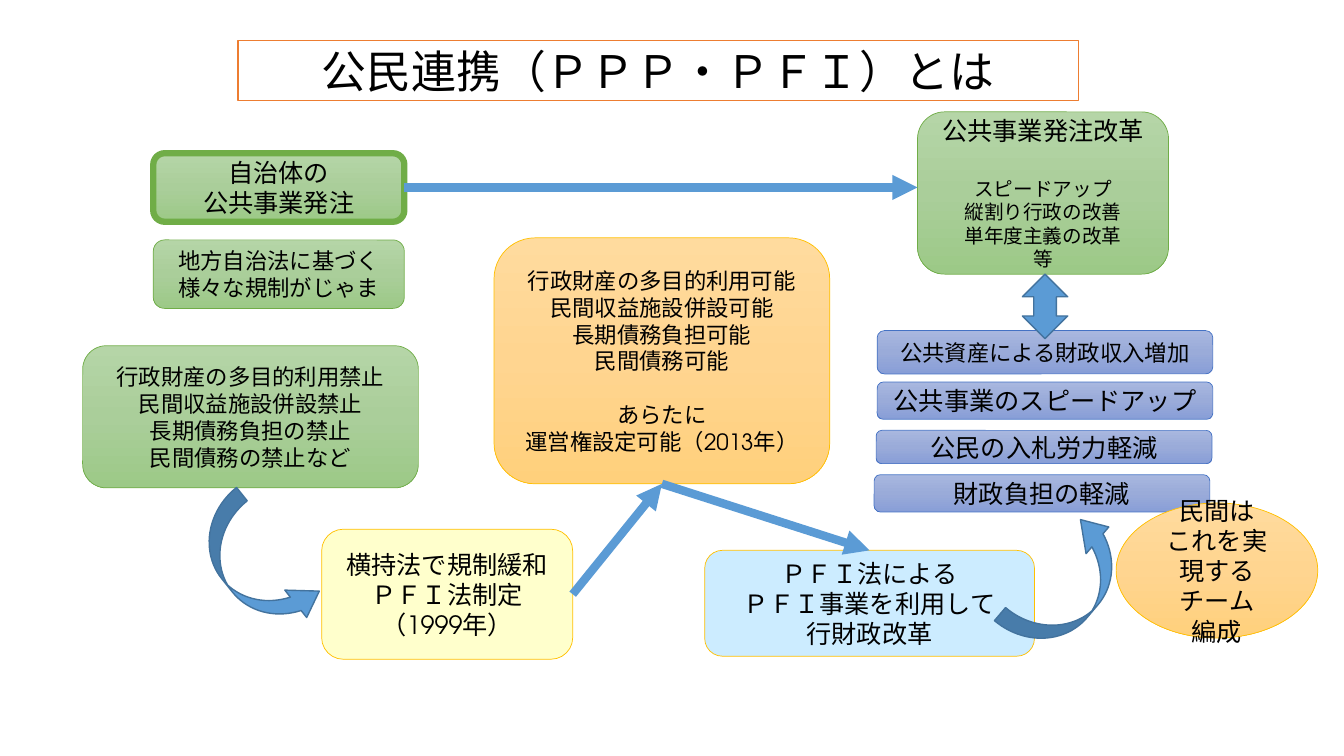
from copy import deepcopy
from dataclasses import dataclass

from lxml import etree
from pptx import Presentation
from pptx.dml.color import RGBColor
from pptx.enum import shapes, text
from pptx.util import Inches, Pt

SHAPE = shapes.MSO_SHAPE
TOP, BOTTOM, RIGHT = 0, 2, 3


class Theme:
    font = "TeX Gyre Adventor"
    ink = "000000"
    title, large, medium, small = 32, 18, 16, 14
    # Each style: fill colours from top to bottom, then the outline colour
    heading = (["FFFFFF"], "ED7D31")
    green = (["B5D5A7", "AACE9A", "9CC987"], "70AD47")
    orange = (["FFDB9E", "FFD590", "FFD07C"], "FFC000")
    indigo = (["A8B7DF", "9AABD9", "889ED7"], "4472C4")
    yellow = (["FFFFCC"], "FFC000")
    sky = (["CCECFF"], "FFC000")
    arrow = (["5B9BD5"], "43739E")


@dataclass
class Box:
    left: float
    top: float
    width: float
    height: float

    def inner(self, left, top, width, height):
        return Box(self.left + left, self.top + top, width, height)

    def lengths(self):
        return [Inches(n) for n in (self.left, self.top, self.width, self.height)]


def color(value):
    return RGBColor.from_string(value)


def paint(shape, style, line_width=0.5):
    colors, outline = style
    if len(colors) == 1:
        shape.fill.solid()
        shape.fill.fore_color.rgb = color(colors[0])
    else:
        shape.fill.gradient()
        shape.fill.gradient_angle = 270
        stops = shape._element.spPr.find(".//{*}gsLst")
        middle = deepcopy(stops[0])
        middle.set("pos", "50000")
        stops.insert(1, middle)
        for stop, value in zip(shape.fill.gradient_stops, colors):
            stop.color.rgb = color(value)
    shape.line.color.rgb = color(outline)
    shape.line.width = Pt(line_width)


def write(shape, lines, size):
    """Each line is a text, or a (text, size, space before) tuple."""
    frame = shape.text_frame
    frame_format = {"word_wrap": True, "auto_size": text.MSO_AUTO_SIZE.NONE,
                    "vertical_anchor": text.MSO_ANCHOR.MIDDLE}
    for name, value in frame_format.items():
        setattr(frame, name, value)
    for index, line in enumerate(lines):
        words, points, gap = line if isinstance(line, tuple) else (line, size, 0)
        paragraph = frame.add_paragraph() if index else frame.paragraphs[0]
        paragraph.text = words
        paragraph.alignment = text.PP_ALIGN.CENTER
        if gap:
            paragraph.space_before = Pt(gap)
        font_format = {"name": Theme.font, "size": Pt(points), "bold": False}
        for name, value in font_format.items():
            setattr(paragraph.font, name, value)
        paragraph.font.color.rgb = color(Theme.ink)


def add_card(slide, box, lines, style, size=Theme.large, line_width=0.5,
             kind=SHAPE.ROUNDED_RECTANGLE):
    card = slide.shapes.add_shape(kind, *box.lengths())
    card.shadow.inherit = False
    paint(card, style, line_width)
    write(card, lines, size)
    return card


def add_block_arrow(slide, box, kind, adjustments, rotation=0):
    arrow = slide.shapes.add_shape(kind, *box.lengths())
    arrow.shadow.inherit = False
    arrow.rotation = rotation
    paint(arrow, Theme.arrow, 1)
    for index, value in enumerate(adjustments):
        arrow.adjustments[index] = value


def add_curved_arrow(slide, left, top, rotation):
    add_block_arrow(slide, Box(left, top, 1.49, 0.68), SHAPE.CURVED_UP_ARROW,
                    (0.25, 0.512, 0.385), rotation)


def add_straight_arrow(slide, start, start_side, end=None, end_side=TOP, point=(0, 0)):
    """Arrow from a card's side to another card's side, or to a free point."""
    x, y = (Inches(n) for n in point)
    arrow = slide.shapes.add_connector(shapes.MSO_CONNECTOR.STRAIGHT, x, y, x, y)
    arrow.begin_connect(start, start_side)
    if end is not None:
        arrow.end_connect(end, end_side)
    arrow.line.color.rgb = color(Theme.arrow[0][0])
    arrow.line.width = Pt(6)
    namespace = "{http://schemas.openxmlformats.org/drawingml/2006/main}"
    properties = arrow._element.spPr
    etree.SubElement(properties.find(namespace + "ln"), namespace + "tailEnd",
                     type="triangle")
    etree.SubElement(properties, namespace + "effectLst")


def add_title(slide, box):
    title = slide.shapes.title
    title.left, title.top, title.width, title.height = box.lengths()
    paint(title, Theme.heading, 1)
    write(title, ["公民連携（ＰＰＰ・ＰＦＩ）とは"], Theme.title)


def add_current_rules(slide, box):
    ordering = add_card(slide, box.inner(0.7, 0, 2.49, 0.68),
                        ["自治体の", "公共事業発注"], Theme.green, line_width=4.5)
    add_card(slide, box.inner(0.7, 0.86, 2.49, 0.68),
             ["地方自治法に基づく", "様々な規制がじゃま"], Theme.green, Theme.medium)
    add_card(slide, box.inner(0, 1.91, box.width, 1.41),
             ["行政財産の多目的利用禁止", "民間収益施設併設禁止",
              "長期債務負担の禁止", "民間債務の禁止など"], Theme.green, Theme.medium)
    return ordering


def add_deregulation(slide, box):
    law = add_card(slide, box.inner(0, 2.89, 2.49, 1.29),
                   ["横持法で規制緩和", "ＰＦＩ法制定", "（1999年）"], Theme.yellow)
    freedoms = add_card(slide, box.inner(1.71, 0, 3.33, 2.44),
                        ["行政財産の多目的利用可能", "民間収益施設併設可能",
                         "長期債務負担可能", "民間債務可能",
                         ("あらたに", Theme.medium, 19), "運営権設定可能（2013年）"],
                        Theme.orange, Theme.medium)
    projects = add_card(slide, box.inner(3.8, 3.1, 3.27, 1.05),
                        ["ＰＦＩ法による", "ＰＦＩ事業を利用して", "行財政改革"], Theme.sky)
    add_straight_arrow(slide, law, RIGHT, freedoms, BOTTOM)
    add_straight_arrow(slide, freedoms, BOTTOM, projects, TOP)


def add_reform(slide, box):
    benefits = [
        (0.03, 2.17, 0.43, "公共資産による財政収入増加", Theme.medium),
        (0.03, 2.68, 0.37, "公共事業のスピードアップ", Theme.large),
        (0.02, 3.16, 0.33, "公民の入札労力軽減", Theme.large),
        (0, 3.6, 0.37, "財政負担の軽減", Theme.large),
    ]
    for left, top, height, words, size in benefits:
        add_card(slide, box.inner(left, top, 3.33, height), [words], Theme.indigo, size)
    add_card(slide, box.inner(0.43, 0, 2.49, 1.61),
             [("公共事業発注改革", Theme.large, 0), ("スピードアップ", Theme.small, 22),
              "縦割り行政の改善", "単年度主義の改革", "等"], Theme.green, Theme.small)
    add_block_arrow(slide, box.inner(1.47, 1.61, 0.45, 0.64),
                    SHAPE.UP_DOWN_ARROW, (0.304, 0.5))
    add_card(slide, box.inner(2.4, 3.88, 2, 1.34),
             ["民間は", "これを実現するチーム", "編成"], Theme.orange, kind=SHAPE.OVAL)


def main():
    presentation = Presentation()
    presentation.slide_width, presentation.slide_height = Inches(13.33), Inches(7.5)
    slide = presentation.slides.add_slide(presentation.slide_layouts[5])
    add_title(slide, Box(2.36, 0.4, 8.34, 0.6))
    ordering = add_current_rules(slide, Box(0.82, 1.52, 3.33, 3.32))
    add_deregulation(slide, Box(3.19, 2.36, 7.07, 4.18))
    add_reform(slide, Box(8.67, 1.11, 4.4, 5.22))
    add_curved_arrow(slide, 1.8, 5.29, 51.4)
    add_curved_arrow(slide, 9.86, 5.47, 310.4)
    add_straight_arrow(slide, ordering, RIGHT, point=(9.1, 1.86))
    presentation.save("out.pptx")


if __name__ == "__main__":
    main()
